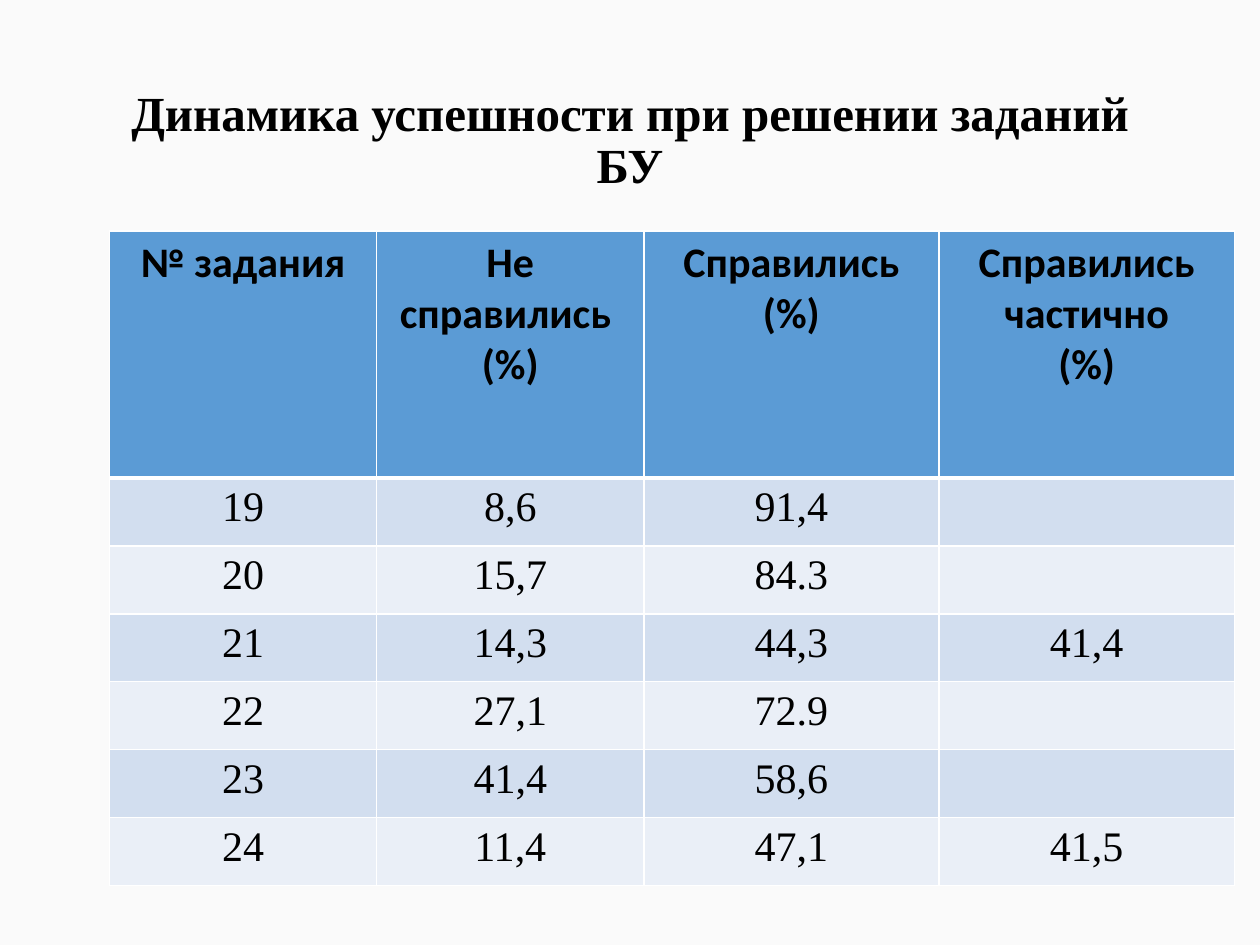
from lxml.etree import SubElement
from pptx import Presentation
from pptx.dml.color import RGBColor
from pptx.enum.text import MSO_ANCHOR, PP_ALIGN
from pptx.oxml.ns import qn
from pptx.util import Pt

BACKGROUND = RGBColor(0xFA, 0xFA, 0xFA)
BLACK = RGBColor(0x00, 0x00, 0x00)
WHITE = RGBColor(0xFF, 0xFF, 0xFF)
HEADER_BLUE = RGBColor(0x5B, 0x9B, 0xD5)
BANDS = [RGBColor(0xD2, 0xDE, 0xEF), RGBColor(0xEA, 0xEF, 0xF7)]

ROWS = [
    ["№ задания", "Не справились \n(%)", "Справились\n(%)", "Справились частично\n(%)"],
    ["19", "8,6", "91,4", ""],
    ["20", "15,7", "84.3", ""],
    ["21", "14,3", "44,3", "41,4"],
    ["22", "27,1", "72.9", ""],
    ["23", "41,4", "58,6", ""],
    ["24", "11,4", "47,1", "41,5"],
]
COLUMN_WIDTHS = [152.7, 152.7, 168.6, 168.9]
HEADER_HEIGHT, ROW_HEIGHT = 141.2, 38.8


def format_text(text_frame, font_name, size, bold):
    for paragraph in text_frame.paragraphs:
        paragraph.alignment = PP_ALIGN.CENTER
        font = paragraph.font
        for run in paragraph.runs:
            font = run.font
        font.name, font.size, font.bold = font_name, Pt(size), bold
        font.color.rgb = BLACK


def add_border(cell, side, width):
    line = SubElement(cell._tc.get_or_add_tcPr(), qn(f"a:ln{side}"), w=str(Pt(width)))
    fill = SubElement(line, qn("a:solidFill"))
    SubElement(fill, qn("a:srgbClr"), val=str(WHITE))


presentation = Presentation()
presentation.slide_width, presentation.slide_height = Pt(720), Pt(540)
slide = presentation.slides.add_slide(presentation.slide_layouts[5])
slide.background.fill.solid()
slide.background.fill.fore_color.rgb = BACKGROUND

# Title
title = slide.shapes.title
title.left, title.top, title.width, title.height = Pt(49.5), Pt(28.75), Pt(621), Pt(104.4)
title.text_frame.text = "Динамика успешности при решении заданий БУ"
title.text_frame.vertical_anchor = MSO_ANCHOR.MIDDLE
title.text_frame.paragraphs[0].line_spacing = 0.9
format_text(title.text_frame, "Times New Roman", 28, True)

# Results table
table_height = HEADER_HEIGHT + ROW_HEIGHT * (len(ROWS) - 1)
table = slide.shapes.add_table(
    len(ROWS), len(COLUMN_WIDTHS), Pt(62.6), Pt(132), Pt(sum(COLUMN_WIDTHS)), Pt(table_height)
).table
for column, width in zip(table.columns, COLUMN_WIDTHS):
    column.width = Pt(width)

for row_index, values in enumerate(ROWS):
    is_header = row_index == 0
    table.rows[row_index].height = Pt(HEADER_HEIGHT if is_header else ROW_HEIGHT)
    for column_index, value in enumerate(values):
        cell = table.cell(row_index, column_index)
        cell.text_frame.text = value
        format_text(cell.text_frame, "Calibri" if is_header else "Times New Roman", 24, is_header)

        # White grid with a thicker rule below the header
        for side in "LRTB":
            below_header = (row_index, side) in [(0, "B"), (1, "T")]
            add_border(cell, side, 3 if below_header else 1)
        cell.fill.solid()
        cell.fill.fore_color.rgb = HEADER_BLUE if is_header else BANDS[(row_index - 1) % 2]

presentation.save("out.pptx")
